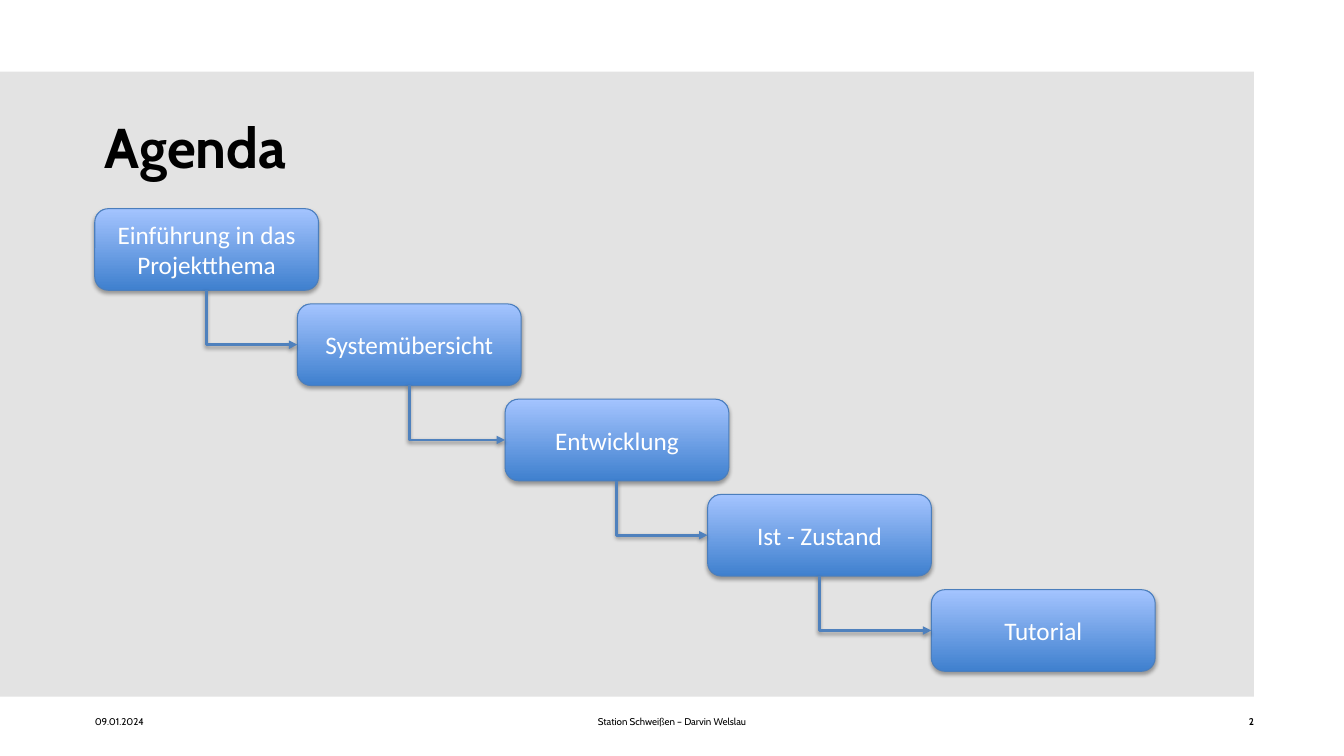
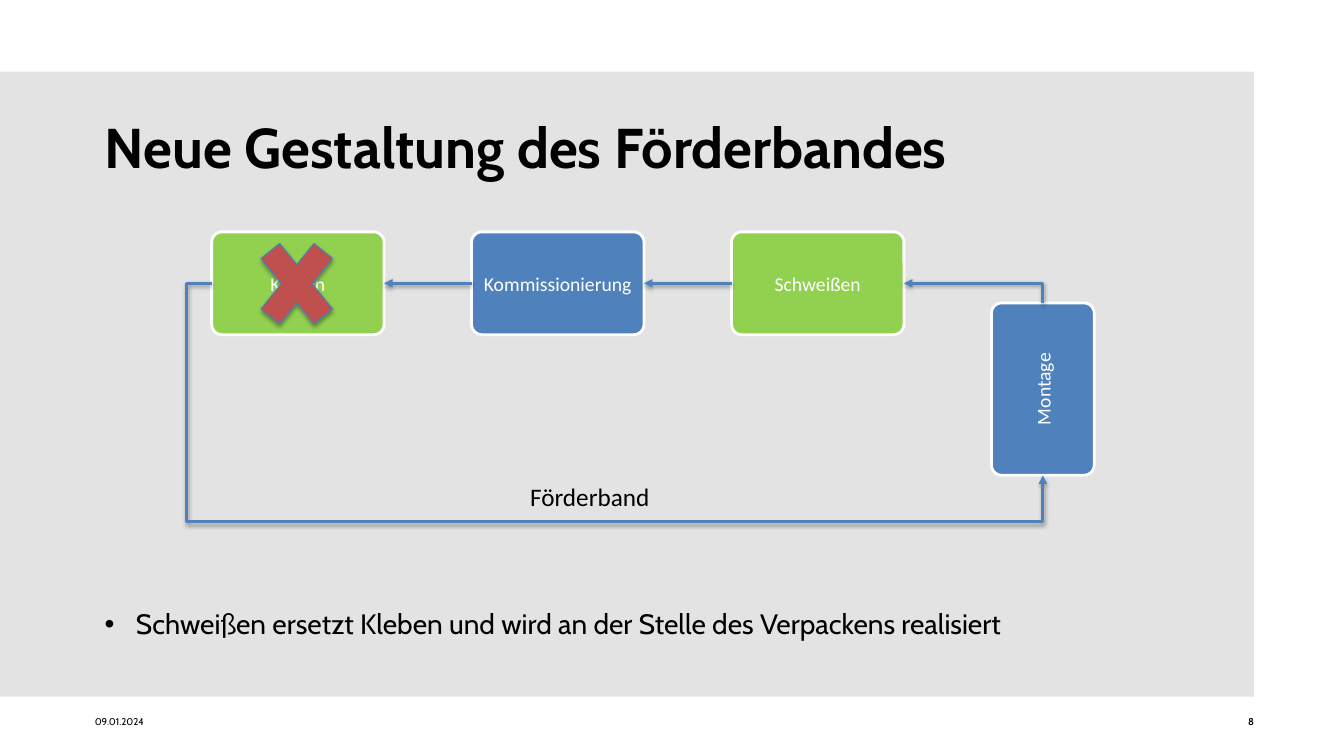
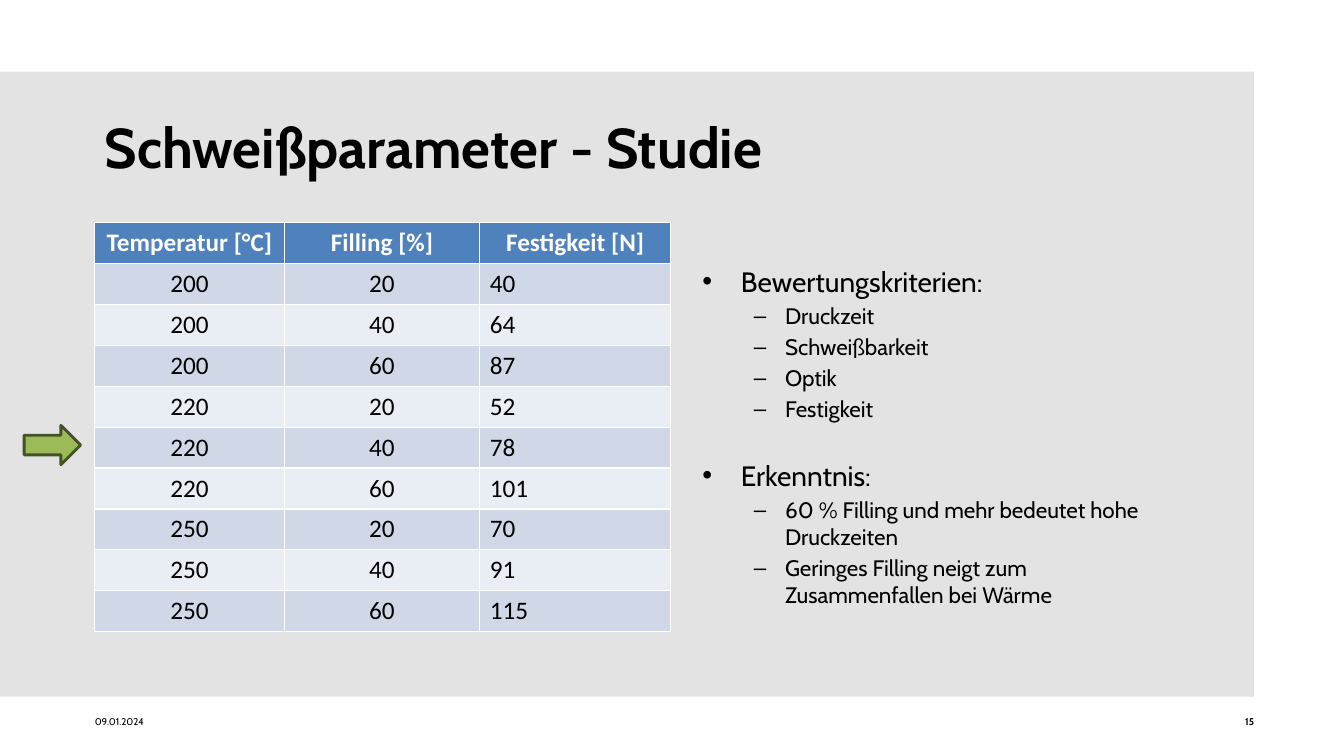
import lxml.etree
import pptx
import pptx.dml.color
import pptx.enum.shapes
import pptx.enum.text
import pptx.oxml.ns
import pptx.util

RGB = pptx.dml.color.RGBColor
SHAPE = pptx.enum.shapes.MSO_SHAPE
CONNECTOR = pptx.enum.shapes.MSO_CONNECTOR
ALIGN = pptx.enum.text.PP_ALIGN
ANCHOR = pptx.enum.text.MSO_ANCHOR
Pt = pptx.util.Pt
Inches = pptx.util.Inches

BLACK = RGB(0x00, 0x00, 0x00)
WHITE = RGB(0xFF, 0xFF, 0xFF)
BAND_GREY = RGB(0xE3, 0xE3, 0xE3)
BLUE = RGB(0x4F, 0x81, 0xBD)
BLUE_EDGE = RGB(0x4B, 0x7E, 0xBC)
STEP_DARK = RGB(0x3F, 0x80, 0xCE)
STEP_LIGHT = RGB(0xA4, 0xC4, 0xFF)
GREEN = RGB(0x92, 0xD0, 0x50)
RED = RGB(0xC0, 0x50, 0x4D)
ARROW_GREEN = RGB(0x9B, 0xBB, 0x59)
ARROW_EDGE = RGB(0x44, 0x52, 0x27)
ROW_DARK = RGB(0xD0, 0xD8, 0xE8)
ROW_LIGHT = RGB(0xE9, 0xED, 0xF4)

SLIDE_WIDTH, SLIDE_HEIGHT = Inches(13.33), Inches(7.5)
MARGIN, BAND_RIGHT = 7.05, 93.3
TOP, LEFT, BOTTOM, RIGHT = range(4)

TITLE = {"name": "Cabin", "size": Pt(40), "bold": True}
FOOTER = {"name": "Cabin", "size": Pt(7), "bold": False}
PAGE_NUMBER = {**FOOTER, "bold": True}
POINT = {"name": "Cabin", "size": Pt(20)}
SUBPOINT = {"name": "Cabin", "size": Pt(16)}
LABEL = {"name": "Calibri", "size": Pt(18), "bold": False}
HEADING = {**LABEL, "bold": True}
STATION = {"name": "Calibri", "size": Pt(14)}
NO_INSETS = dict.fromkeys(
    ("margin_left", "margin_right", "margin_top", "margin_bottom"), 0)
SMALL_INSETS = dict.fromkeys(NO_INSETS, Inches(0.06))


def across(percent):
    return round(SLIDE_WIDTH * percent / 100)


def down(percent):
    return round(SLIDE_HEIGHT * percent / 100)


def area(left, top, width, height):
    return across(left), down(top), across(width), down(height)


def set_values(target, values):
    for name, value in values.items():
        setattr(target, name, value)


def add_xml(parent, tag, **attributes):
    return lxml.etree.SubElement(parent, pptx.oxml.ns.qn(tag), attributes)


def write(paragraph, text, font, color=BLACK, align=ALIGN.LEFT):
    paragraph.alignment = align
    run = paragraph.add_run()
    run.text = text
    set_values(run.font, font)
    run.font.color.rgb = color


def add_text(slide, place, text, font, align=ALIGN.LEFT, **frame_values):
    frame = slide.shapes.add_textbox(*area(*place)).text_frame
    set_values(frame, {"word_wrap": True, **frame_values})
    write(frame.paragraphs[0], text, font, align=align)


def set_line(line, color, width):
    line.color.rgb = color
    line.width = Pt(width)


def add_shadow(shape, opacity, distance):
    effects = add_xml(shape._element.spPr, "a:effectLst")
    shadow = add_xml(effects, "a:outerShdw", blurRad=str(Pt(3.1)),
                     dist=str(Pt(distance)), dir="5400000", rotWithShape="0")
    color = add_xml(shadow, "a:srgbClr", val="000000")
    add_xml(color, "a:alpha", val=str(opacity * 1000))


def add_figure(slide, kind, place, fill, edge=None, edge_width=2):
    figure = slide.shapes.add_shape(kind, *area(*place))
    figure.fill.solid()
    figure.fill.fore_color.rgb = fill
    if edge is None:
        figure.line.fill.background()
    else:
        set_line(figure.line, edge, edge_width)
    figure.shadow.inherit = False
    return figure


def add_step(slide, place, text):
    step = slide.shapes.add_shape(SHAPE.ROUNDED_RECTANGLE, *area(*place))
    step.fill.gradient()
    step.fill.gradient_angle = 90
    for stop, color in zip(step.fill.gradient_stops, (STEP_DARK, STEP_LIGHT)):
        stop.color.rgb = color
    set_line(step.line, BLUE_EDGE, 0.75)
    add_shadow(step, 35, 1.8)
    write(step.text_frame.paragraphs[0], text, LABEL, WHITE, ALIGN.CENTER)
    return step


def add_station(slide, place, text, fill):
    station = add_figure(slide, SHAPE.ROUNDED_RECTANGLE, place, fill, WHITE)
    station.adjustments[0] = 0.1
    set_values(station.text_frame, SMALL_INSETS)
    write(station.text_frame.paragraphs[0], text, STATION, WHITE, ALIGN.CENTER)
    return station


def connect(slide, start, start_side, end, end_side, arrow="a:tailEnd",
            preset=None, bends=()):
    kind = CONNECTOR.ELBOW if preset else CONNECTOR.STRAIGHT
    link = slide.shapes.add_connector(kind, 0, 0, 0, 0)
    link.begin_connect(start, start_side)
    link.end_connect(end, end_side)
    if preset:
        geometry = link._element.spPr.find(pptx.oxml.ns.qn("a:prstGeom"))
        geometry.set("prst", preset)
        guides = geometry.find(pptx.oxml.ns.qn("a:avLst"))
        for number, share in enumerate(bends, 1):
            add_xml(guides, "a:gd", name=f"adj{number}",
                    fmla=f"val {round(share * 100000)}")
    set_line(link.line, BLUE, 2)
    add_xml(link.line._get_or_add_ln(), arrow, type="triangle")
    add_shadow(link, 38, 1.6)


def add_bullet(paragraph, symbol, indent, hanging):
    properties = paragraph._p.get_or_add_pPr()
    properties.set("marL", str(Inches(indent)))
    properties.set("indent", str(-Inches(hanging)))
    add_xml(properties, "a:buFont", typeface="Arial")
    add_xml(properties, "a:buChar", char=symbol)


def add_points(slide, place, points, indent, hanging):
    frame = slide.shapes.add_textbox(*area(*place)).text_frame
    frame.word_wrap = True
    paragraph = frame.paragraphs[0]
    for number, (point, subpoints) in enumerate(points):
        if number:
            paragraph = frame.add_paragraph()
            paragraph.space_before = Pt(26)
        add_bullet(paragraph, "•", indent, hanging)
        write(paragraph, point, POINT)
        for subpoint in subpoints:
            paragraph = frame.add_paragraph()
            paragraph.level = 1
            paragraph.space_before = Pt(3)
            add_bullet(paragraph, "–", 0.88, 0.31)
            write(paragraph, subpoint, SUBPOINT)


def add_page(deck, title, number, footer=None):
    slide = deck.slides.add_slide(deck.slide_layouts[5])
    band = add_figure(slide, SHAPE.RECTANGLE, (0, 9.47, BAND_RIGHT, 82.67), BAND_GREY)
    heading = slide.shapes.title
    heading._element.addprevious(band._element)
    places = area(MARGIN, 10.93, 83.93, 16.67)
    set_values(heading, dict(zip(("left", "top", "width", "height"), places)))
    set_values(heading.text_frame, {"vertical_anchor": ANCHOR.MIDDLE, "word_wrap": True,
                                    "auto_size": pptx.enum.text.MSO_AUTO_SIZE.NONE})
    write(heading.text_frame.paragraphs[0], title, TITLE)

    width = 23.33
    entries = [(MARGIN, width, "09.01.2024", FOOTER, ALIGN.LEFT),
               (BAND_RIGHT - width, width, str(number), PAGE_NUMBER, ALIGN.RIGHT)]
    if footer:
        entries.append((33, 34, footer, FOOTER, ALIGN.CENTER))
    for left, span, text, font, align in entries:
        add_text(slide, (left, 94.67, span, 1.6), text, font, align,
                 vertical_anchor=ANCHOR.MIDDLE, **NO_INSETS)
    return slide


def build_agenda(deck):
    slide = add_page(deck, "Agenda", 2, "Station Schweißen – Darvin Welslau")
    topics = [(7.05, "Einführung in das Projektthema"), (22.13, "Systemübersicht"),
              (37.58, "Entwicklung"), (52.65, "Ist - Zustand"), (69.3, "Tutorial")]
    steps = [add_step(slide, (left, 27.6 + 12.6 * row, 16.65, 10.8), topic)
             for row, (left, topic) in enumerate(topics)]
    for step, following in zip(steps, steps[1:]):
        connect(slide, following, LEFT, step, BOTTOM, "a:headEnd", "bentConnector2")


def build_conveyor(deck):
    slide = add_page(deck, "Neue Gestaltung des Förderbandes", 8)
    first, pitch = 15.75, 19.34
    gluing, picking, welding = [
        add_station(slide, (first + pitch * column, 30.67, 12.83, 13.6), name, fill)
        for column, (name, fill) in enumerate(
            [("Kleben", GREEN), ("Kommissionierung", BLUE), ("Schweißen", GREEN)])]
    assembly = add_station(slide, (first + pitch * 3, 40.07, 7.65, 22.8), "Montage", BLUE)
    assembly.text_frame._txBody.bodyPr.set("vert", "vert270")

    connect(slide, welding, RIGHT, assembly, TOP, "a:headEnd", "bentConnector2")
    connect(slide, welding, LEFT, picking, RIGHT)
    connect(slide, picking, LEFT, gluing, RIGHT)
    connect(slide, gluing, LEFT, assembly, BOTTOM, preset="bentConnector4",
            bends=(-0.03, 1.24))
    add_text(slide, (38.7, 63.07, 10.5, 5.33), "Förderband", LABEL, word_wrap=False)
    cross = add_figure(slide, SHAPE.MATH_MULTIPLY, (18.3, 29.2, 7.58, 16.67),
                       RED, BLUE_EDGE, 0.75)
    cross._element.spPr.remove(cross._element.spPr.find(pptx.oxml.ns.qn("a:effectLst")))
    add_shadow(cross, 35, 1.8)
    replacement = "Schweißen ersetzt Kleben und wird an der Stelle des Verpackens realisiert"
    add_points(slide, (MARGIN, 79.6, 80, 7), [(replacement, [])], 0.31, 0.31)


def add_results(slide, headings, results):
    widths, row_height = (14.1, 14.55, 14.18), 5.41
    rows = [headings, *results]
    place = area(MARGIN, 29.47, sum(widths), row_height * len(rows))
    table = slide.shapes.add_table(len(rows), len(widths), *place).table
    for column, width in zip(table.columns, widths):
        column.width = across(width)
    for row, values in enumerate(rows):
        table.rows[row].height = down(row_height)
        for column, value in enumerate(values):
            cell = table.cell(row, column)
            cell.fill.solid()
            if row == 0:
                fill, font, color = BLUE, HEADING, WHITE
            else:
                fill, font, color = (ROW_DARK if row % 2 else ROW_LIGHT), LABEL, BLACK
            cell.fill.fore_color.rgb = fill
            align = ALIGN.LEFT if row and column == 2 else ALIGN.CENTER
            write(cell.text_frame.paragraphs[0], str(value), font, color, align)


def build_study(deck):
    slide = add_page(deck, "Schweißparameter - Studie", 15)
    strengths = {200: (40, 64, 87), 220: (52, 78, 101), 250: (70, 91, 115)}
    results = [(temperature, filling, strength)
               for temperature, measured in strengths.items()
               for filling, strength in zip((20, 40, 60), measured)]
    add_results(slide, ("Temperatur [°C]", "Filling [%]", "Festigkeit [N]"), results)
    add_figure(slide, SHAPE.RIGHT_ARROW, (1.8, 56.27, 4.2, 5.2), ARROW_GREEN, ARROW_EDGE)
    add_points(slide, (51.08, 34.3, 37.58, 49), [
        ("Bewertungskriterien:", ["Druckzeit", "Schweißbarkeit", "Optik", "Festigkeit"]),
        ("Erkenntnis:", ["60 % Filling und mehr bedeutet hohe Druckzeiten",
                         "Geringes Filling neigt zum Zusammenfallen bei Wärme"]),
    ], 0.44, 0.38)


def main():
    deck = pptx.Presentation()
    set_values(deck, {"slide_width": SLIDE_WIDTH, "slide_height": SLIDE_HEIGHT})
    for build in (build_agenda, build_conveyor, build_study):
        build(deck)
    deck.save("out.pptx")


if __name__ == "__main__":
    main()
